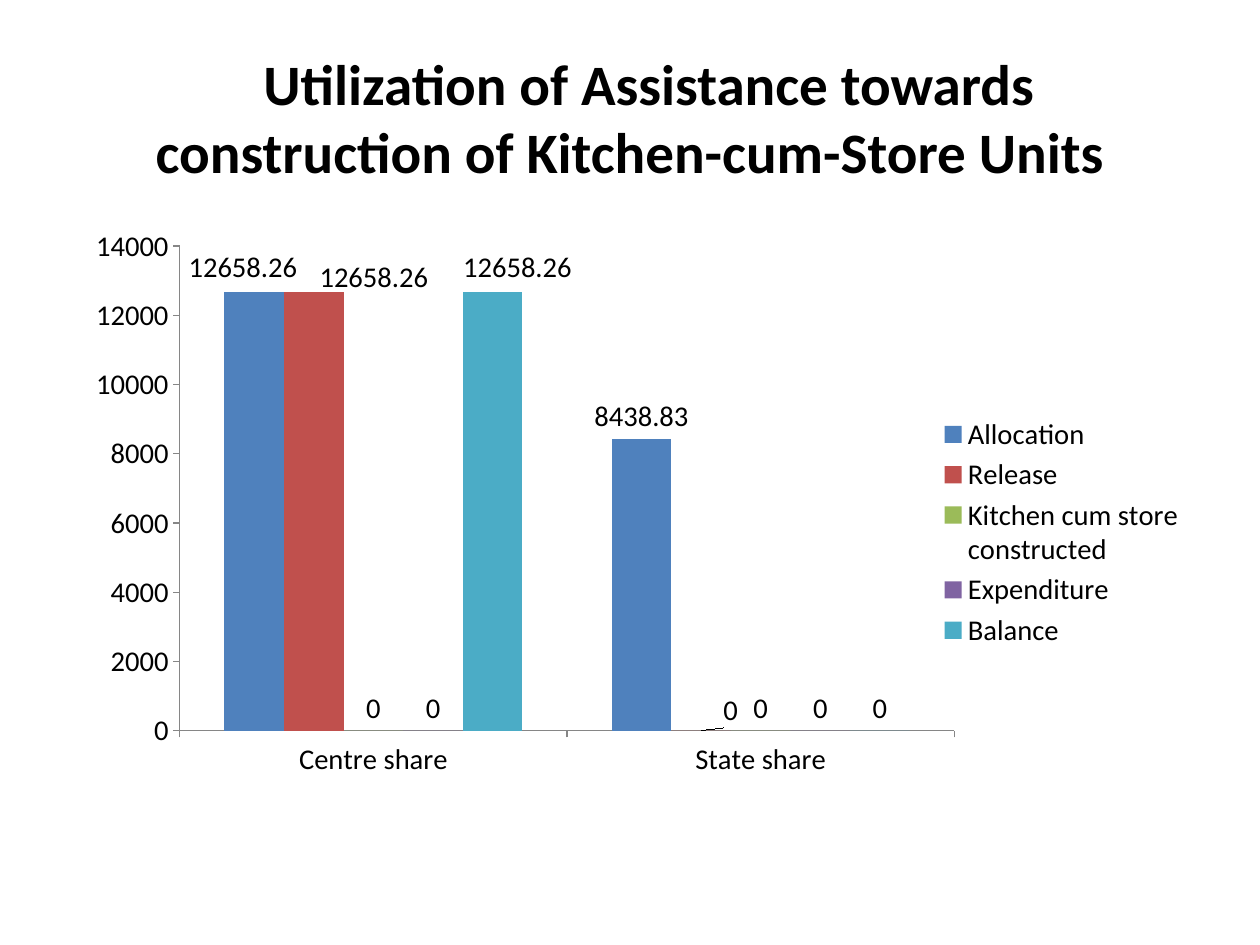
from dataclasses import dataclass

from lxml import etree
from pptx import Presentation
from pptx.chart.data import CategoryChartData
from pptx.dml.color import RGBColor
from pptx.enum import chart as ch, text
from pptx.oxml.ns import qn
from pptx.util import Pt


@dataclass(frozen=True)
class Theme:
    font: str = "Calibri"
    head: int = 36
    label: int = 18
    ink: str = "000000"
    axis: str = "868686"
    bars: tuple = ("4F81BD", "C0504D", "9BBB59", "8064A2", "4BACC6")


HEAD = "Utilization of Assistance towards construction of Kitchen-cum-Store Units"
SHARES = ("Centre share", "State share")
FUNDS = {
    "Allocation": (12658.26, 8438.83),
    "Release": (12658.26, 0),
    "Kitchen cum store constructed": (0, 0),
    "Expenditure": (0, 0),
    "Balance": (12658.26, 0),
}
# (series, category): label shift as a share of the chart's width and height
SHIFTS = {
    ("Allocation", 0): (-0.01, -0.005),
    ("Release", 0): (0.053, 0.01),
    ("Release", 1): (0.026, 0.003),
    ("Balance", 0): (0.022, -0.005),
}
PLOT = {"layoutTarget": "inner", "xMode": "edge", "yMode": "edge",
        "x": 0.103, "y": 0.041, "w": 0.683, "h": 0.777}


def layout(rules):
    """Build a manual chart layout element from its settings."""
    root = etree.Element(qn("c:layout"))
    manual = etree.SubElement(root, qn("c:manualLayout"))
    for name, val in rules.items():
        etree.SubElement(manual, qn("c:" + name)).set("val", str(val))
    return root


class Page:
    def __init__(self, deck, theme):
        self.theme = theme
        self.slide = deck.slides.add_slide(deck.slide_layouts[5])

    def style(self, font, size, bold=False):
        font.name = self.theme.font
        font.size = Pt(size)
        font.bold = bold
        font.color.rgb = RGBColor.from_string(self.theme.ink)

    def title(self, words, box, indent):
        shape = self.slide.shapes.title
        shape.left, shape.top, shape.width, shape.height = map(Pt, box)
        frame = shape.text_frame
        frame.text = words
        frame.word_wrap = True
        frame.auto_size = text.MSO_AUTO_SIZE.NONE
        frame.vertical_anchor = text.MSO_ANCHOR.MIDDLE
        frame.margin_left = frame.margin_right = Pt(8)
        frame.margin_top = frame.margin_bottom = Pt(4)
        para = frame.paragraphs[0]
        para.alignment = text.PP_ALIGN.CENTER
        props = para._p.get_or_add_pPr()
        props.set("marL", "0")
        props.set("indent", str(Pt(indent)))
        self.style(para.font, self.theme.head, bold=True)

    def columns(self, cats, rows, box):
        data = CategoryChartData()
        data.categories = cats
        for name, vals in rows.items():
            data.add_series(name, vals)
        chart = self.slide.shapes.add_chart(
            ch.XL_CHART_TYPE.COLUMN_CLUSTERED, *map(Pt, box), data).chart
        self.style(chart.font, self.theme.label)
        chart.has_title = False
        chart.has_legend = True
        chart.legend.position = ch.XL_LEGEND_POSITION.RIGHT
        chart.legend.include_in_layout = False
        plot = chart.plots[0]
        plot.gap_width, plot.overlap = 150, 0
        plot.vary_by_categories = False
        for series, color in zip(plot.series, self.theme.bars):
            series.format.fill.solid()
            series.format.fill.fore_color.rgb = RGBColor.from_string(color)
            self.tags(series)
        for axis in (chart.category_axis, chart.value_axis):
            self.axis(axis)
        scale = chart.value_axis
        scale.minimum_scale, scale.maximum_scale = 0, 14000
        scale.major_unit = 2000
        return chart

    def tags(self, series):
        """Show the values above the bars, with no leader lines."""
        labels = series.data_labels
        labels.show_value = True
        labels.position = ch.XL_LABEL_POSITION.OUTSIDE_END
        self.style(labels.font, self.theme.label)
        for line in series._element.xpath("c:dLbls/c:showLeaderLines"):
            line.getparent().remove(line)

    def axis(self, axis):
        axis.has_major_gridlines = False
        axis.major_tick_mark = ch.XL_TICK_MARK.OUTSIDE
        axis.minor_tick_mark = ch.XL_TICK_MARK.NONE
        axis.format.line.width = Pt(0.75)
        axis.format.line.color.rgb = RGBColor.from_string(self.theme.axis)
        self.style(axis.tick_labels.font, self.theme.label)

    def place(self, chart, rules):
        """Fix the plot area inside the chart."""
        area = chart._chartSpace.find(".//" + qn("c:plotArea"))
        for old in area.findall(qn("c:layout")):
            area.remove(old)
        area.insert(0, layout(rules))

    def shift(self, chart, moves):
        """Move single data labels away from their default places."""
        rows = {series.name: series for series in chart.plots[0].series}
        for (name, idx), (dx, dy) in moves.items():
            series = rows[name]
            label = series.points[idx].data_label
            self.style(label.font, self.theme.label)
            label.position = ch.XL_LABEL_POSITION.OUTSIDE_END
            mark = series._element.xpath(f"c:dLbls/c:dLbl/c:idx[@val='{idx}']")[0]
            mark.addnext(layout({"x": dx, "y": dy}))


def main():
    deck = Presentation()
    deck.slide_width, deck.slide_height = Pt(793.75), Pt(595.25)
    page = Page(deck, Theme())
    left, width = 39.69, 714.38
    page.title(HEAD, (left, 23.84, width, 99.21), indent=24)
    chart = page.columns(SHARES, FUNDS, (left, 138.89, width, 392.84))
    page.place(chart, PLOT)
    page.shift(chart, SHIFTS)
    deck.save("out.pptx")


if __name__ == "__main__":
    main()
